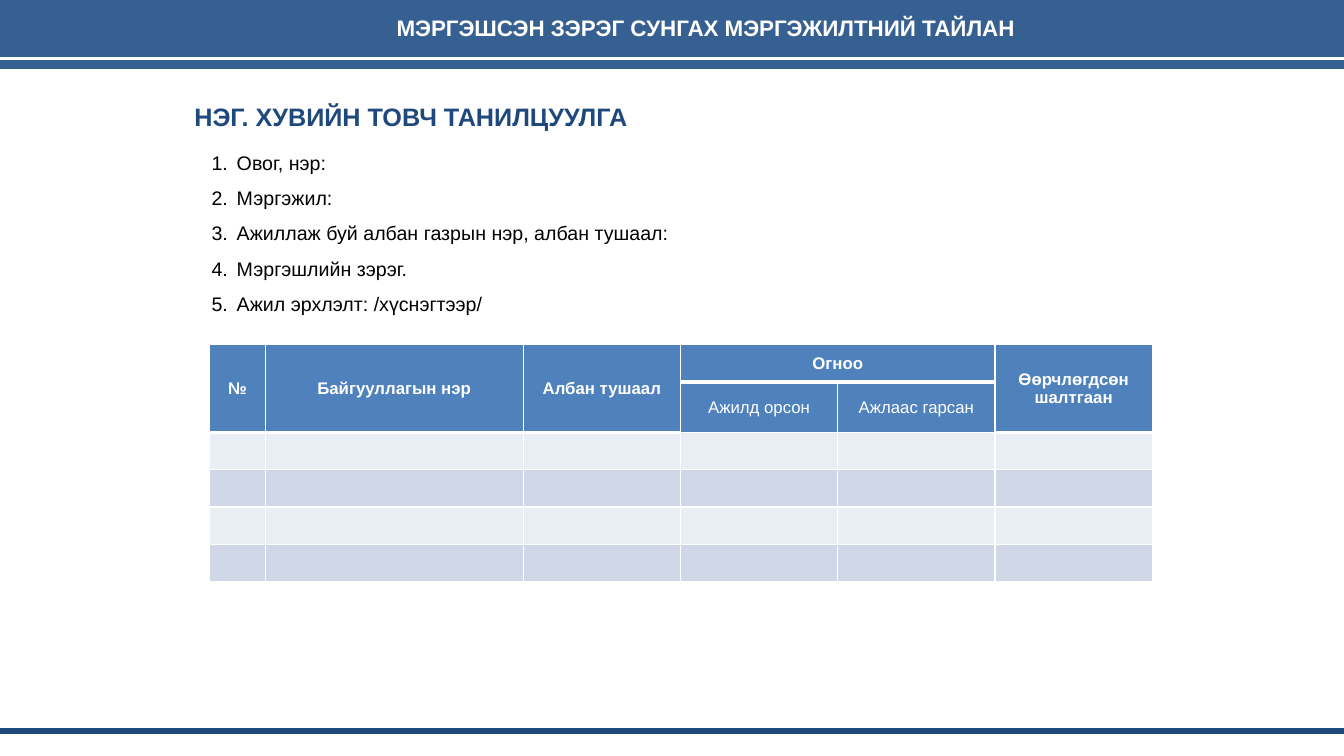
from dataclasses import dataclass

from lxml import etree
from pptx import Presentation
from pptx.dml.color import RGBColor
from pptx.enum.shapes import MSO_CONNECTOR, MSO_SHAPE
from pptx.enum.text import MSO_ANCHOR, MSO_AUTO_SIZE, PP_ALIGN
from pptx.oxml.ns import qn
from pptx.slide import Slide
from pptx.table import _Cell
from pptx.util import Inches, Pt

RECT = MSO_SHAPE.RECTANGLE
STRAIGHT = MSO_CONNECTOR.STRAIGHT
MIDDLE = MSO_ANCHOR.MIDDLE
GROW = MSO_AUTO_SIZE.SHAPE_TO_FIT_TEXT
LEFT, CENTER = PP_ALIGN.LEFT, PP_ALIGN.CENTER

WHITE = RGBColor(0xFF, 0xFF, 0xFF)
BLACK = RGBColor(0, 0, 0)
BAND = RGBColor(0x37, 0x60, 0x92)
NAVY = RGBColor(0x1F, 0x49, 0x7D)
HEAD = RGBColor(0x4F, 0x81, 0xBD)
PALE = RGBColor(0xE9, 0xED, 0xF4)
GREY = RGBColor(0xD0, 0xD8, 0xE8)

FONT = "Arial"
WIDTH, HEIGHT = 13.33, 7.5
COLS = [0.55, 2.56] + [1.56] * 4
ROWS, ROW_H = 6, 0.37


@dataclass
class Rule:
    top: float
    color: RGBColor
    weight: float


@dataclass
class Label:
    box: tuple[float, float, float, float]
    lines: list[str]
    size: int
    color: RGBColor
    bold: bool = True
    align: PP_ALIGN = LEFT
    listed: bool = False


@dataclass
class Head:
    text: str
    row: int
    col: int
    down: int = 1
    across: int = 1


RULES = [Rule(7.25, NAVY, 4.5), Rule(0.58, WHITE, 2.25)]

LABELS = [
    Label((2.11, 0.09, 9.78, 0.37),
          ["МЭРГЭШСЭН ЗЭРЭГ СУНГАХ МЭРГЭЖИЛТНИЙ ТАЙЛАН"],
          16, WHITE, align=CENTER),
    Label((1.83, 0.96, 8.83, 0.4), ["НЭГ. ХУВИЙН ТОВЧ ТАНИЛЦУУЛГА"], 18, NAVY),
    Label((2, 1.33, 9.33, 1.82),
          ["Овог, нэр:", "Мэргэжил:",
           "Ажиллаж буй албан газрын нэр, албан тушаал:",
           "Мэргэшлийн зэрэг.", "Ажил эрхлэлт: /хүснэгтээр/"],
          14, BLACK, bold=False, listed=True),
]

HEADS = [
    Head("№", 0, 0, down=2),
    Head("Байгууллагын нэр", 0, 1, down=2),
    Head("Албан тушаал", 0, 2, down=2),
    Head("Огноо", 0, 3, across=2),
    Head("Өөрчлөгдсөн шалтгаан", 0, 5, down=2),
    Head("Ажилд орсон", 1, 3),
    Head("Ажлаас гарсан", 1, 4),
]


def style(run, size: int, color: RGBColor, bold: bool) -> None:
    for name, value in {"name": FONT, "size": Pt(size), "bold": bold}.items():
        setattr(run.font, name, value)
    run.font.color.rgb = color


def add_band(slide: Slide) -> None:
    band = slide.shapes.add_shape(RECT, 0, 0, Inches(WIDTH), Inches(0.67))
    band.shadow.inherit = False
    band.fill.solid()
    band.fill.fore_color.rgb = BAND
    band.line.color.rgb = BAND
    band.line.width = Pt(2)


def add_rule(slide: Slide, rule: Rule) -> None:
    top = Inches(rule.top)
    line = slide.shapes.add_connector(STRAIGHT, 0, top, Inches(WIDTH), top)
    line.line.color.rgb = rule.color
    line.line.width = Pt(rule.weight)
    etree.SubElement(line._element.spPr, qn("a:effectLst"))


def add_label(slide: Slide, label: Label) -> None:
    frame = slide.shapes.add_textbox(*map(Inches, label.box)).text_frame
    frame.word_wrap = True
    frame.auto_size = GROW
    for i, text in enumerate(label.lines):
        para = frame.add_paragraph() if i else frame.paragraphs[0]
        para.alignment = label.align
        if label.listed:
            para.line_spacing = 1.5
            props = para._p.get_or_add_pPr()
            props.set("marL", str(Inches(0.25)))
            props.set("indent", str(-Inches(0.25)))
            etree.SubElement(props, qn("a:buAutoNum"), type="arabicPeriod")
        run = para.add_run()
        run.text = text
        style(run, label.size, label.color, label.bold)


def paint(cell: _Cell, fill: RGBColor, bottom: float) -> None:
    """Set white borders, then the fill that must follow them."""
    props = cell._tc.get_or_add_tcPr()
    for side, weight in {"L": 1, "R": 1, "T": 1, "B": bottom}.items():
        line = etree.SubElement(props, qn(f"a:ln{side}"), w=str(Pt(weight)))
        solid = etree.SubElement(line, qn("a:solidFill"))
        etree.SubElement(solid, qn("a:srgbClr"), val=str(WHITE))
    cell.fill.solid()
    cell.fill.fore_color.rgb = fill


def add_grid(slide: Slide) -> None:
    table = slide.shapes.add_table(
        ROWS, len(COLS), Inches(2.08), Inches(3.42),
        Inches(sum(COLS)), Inches(ROWS * ROW_H)).table
    for col, width in zip(table.columns, COLS):
        col.width = Inches(width)
    for r, row in enumerate(table.rows):
        row.height = Inches(ROW_H)
        fill = HEAD if r < 2 else (PALE, GREY)[r % 2]
        for c, cell in enumerate(row.cells):
            thick = r == 0 or (r == 1 and c not in (3, 4))
            paint(cell, fill, 3 if thick else 1)
            if r > 1:
                etree.SubElement(cell.text_frame.paragraphs[0]._p,
                                 qn("a:endParaRPr"), sz="1200")
    for head in HEADS:
        cell = table.cell(head.row, head.col)
        if head.down * head.across > 1:
            cell.merge(table.cell(head.row + head.down - 1,
                                  head.col + head.across - 1))
        cell.vertical_anchor = MIDDLE
        para = cell.text_frame.paragraphs[0]
        para.alignment = CENTER
        run = para.add_run()
        run.text = head.text
        style(run, 12, WHITE, head.row == 0)


def main() -> None:
    deck = Presentation()
    deck.slide_width, deck.slide_height = Inches(WIDTH), Inches(HEIGHT)
    slide = deck.slides.add_slide(deck.slide_layouts[6])
    add_band(slide)
    for rule in RULES:
        add_rule(slide, rule)
    for label in LABELS:
        add_label(slide, label)
    add_grid(slide)
    deck.save("out.pptx")


if __name__ == "__main__":
    main()
